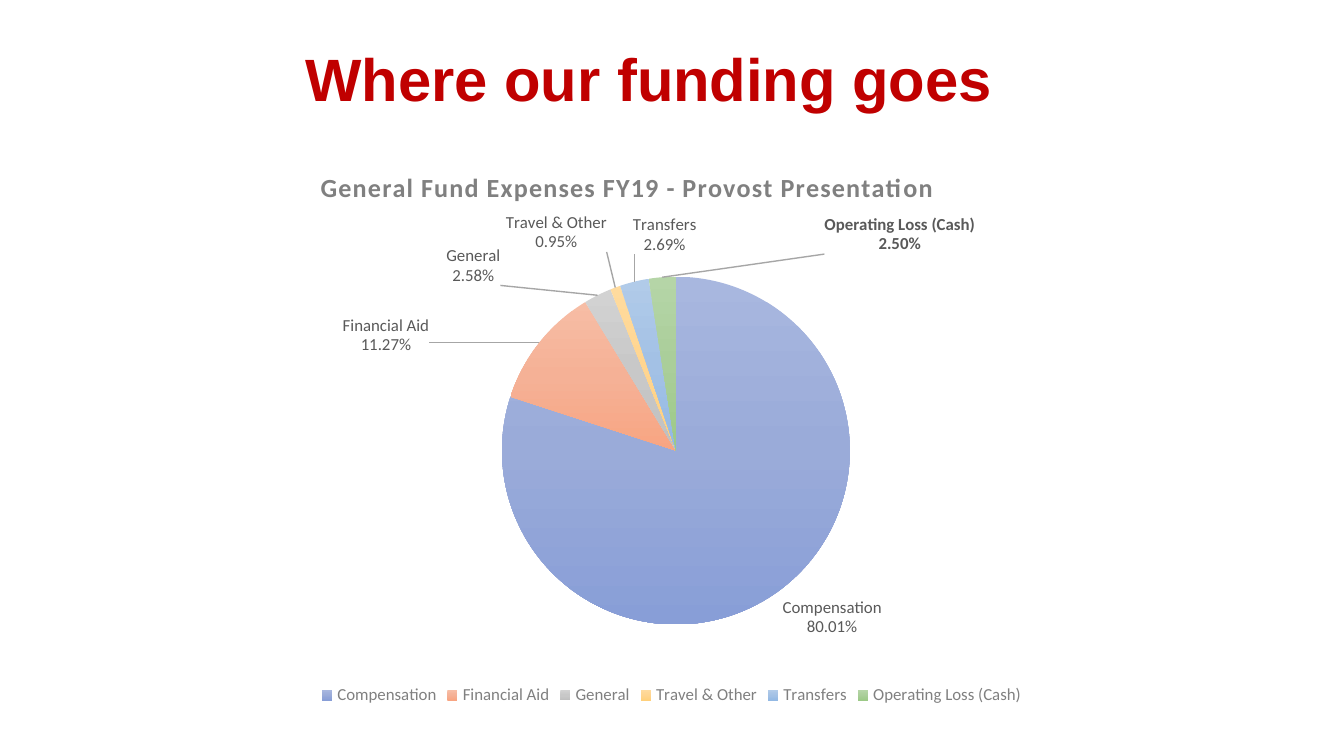
from copy import deepcopy

from pptx import Presentation
from pptx.chart.data import CategoryChartData
from pptx.dml.color import RGBColor
from pptx.enum.chart import XL_CHART_TYPE, XL_LABEL_POSITION, XL_LEGEND_POSITION
from pptx.enum.text import MSO_ANCHOR, PP_ALIGN
from pptx.oxml import parse_xml
from pptx.oxml.ns import nsdecls, qn
from pptx.util import Cm, Pt

PIE = XL_CHART_TYPE.PIE
OUTSIDE_END = XL_LABEL_POSITION.OUTSIDE_END
BOTTOM = XL_LEGEND_POSITION.BOTTOM
MIDDLE = MSO_ANCHOR.MIDDLE
CENTER = PP_ALIGN.CENTER

COLORS = {
    "title": "C00000",
    "chart_text": "808080",
    "label": "595959",
    "leader": "A6A6A6",
}

EXPENSES = [
    ("Compensation", 80.01, ("A8B7DF", "9AABD9", "889ED7"), None),
    ("Financial Aid", 11.27, ("F7BDA5", "F5B196", "F8A582"), (-0.07, 0.03)),
    ("General", 2.58, ("D2D2D2", "C8C8C8", "C0C0C0"), (-0.063, -0.005)),
    ("Travel & Other", 0.95, ("FFDB9E", "FFD590", "FFD07C"), (-0.004, -0.05)),
    ("Transfers", 2.69, ("B1CBE9", "A3C1E5", "93B9E4"), (0.043, -0.035)),
    ("Operating Loss (Cash)", -2.5, ("B5D5A7", "AACE9A", "9CC987"), (0.16, -0.027)),
]


def manual_layout(x, y, width=None, height=None):
    edges = '<c:xMode val="edge"/><c:yMode val="edge"/>'
    size = f'<c:w val="{width}"/><c:h val="{height}"/>'
    return parse_xml(
        f'<c:layout {nsdecls("c")}><c:manualLayout>'
        f'{"<c:layoutTarget val=" + chr(34) + "inner" + chr(34) + "/>" + edges if width else ""}'
        f'<c:x val="{x}"/><c:y val="{y}"/>{size if width else ""}'
        "</c:manualLayout></c:layout>"
    )


class FundingSlide:
    def __init__(self, presentation):
        self.slide = presentation.slides.add_slide(presentation.slide_layouts[5])
        self.heading_font = "Arial"
        self.chart_font = "Calibri"

    def style_font(self, font, name, size, color, bold=False):
        font.name, font.size, font.bold = name, Pt(size), bold
        font.color.rgb = RGBColor.from_string(COLORS[color])

    def add_title(self, text, left, top, width, height):
        shape = self.slide.shapes.title
        shape.left, shape.top, shape.width, shape.height = left, top, width, height
        shape.text_frame.text = text
        shape.text_frame.vertical_anchor = MIDDLE
        paragraph = shape.text_frame.paragraphs[0]
        paragraph.alignment, paragraph.line_spacing = CENTER, 0.9
        self.style_font(paragraph.runs[0].font, self.heading_font, 32, "title", True)

    def add_pie(self, title, expenses, left, top, width, height):
        data = CategoryChartData()
        data.categories = [name for name, *_ in expenses]
        data.add_series("Series 1", [value for _, value, *_ in expenses])
        chart = self.slide.shapes.add_chart(PIE, left, top, width, height, data).chart
        chart.font.name, chart.font.size = self.chart_font, Pt(10)
        self.add_chart_title(chart, title)
        chart.has_legend = True
        chart.legend.position, chart.legend.include_in_layout = BOTTOM, False
        self.style_font(chart.legend.font, self.chart_font, 9, "chart_text")
        plot_area = chart._chartSpace.chart.plotArea
        for layout in plot_area.findall(qn("c:layout")):
            plot_area.remove(layout)
        plot_area.insert(0, manual_layout(0.386, 0.233, 0.234, 0.615))
        chart.plots[0].vary_by_categories = True
        series = chart.plots[0].series[0]
        for index, (_, _, colors, _) in enumerate(expenses):
            self.fill_slice(series.points[index], colors)
        self.add_labels(series, [offset for *_, offset in expenses])

    def add_chart_title(self, chart, text):
        chart.has_title = True
        chart.chart_title.text_frame.text = text
        run = chart.chart_title.text_frame.paragraphs[0].runs[0]
        self.style_font(run.font, self.chart_font, 14, "chart_text", True)
        run.font._element.set("spc", "50")
        title = chart.chart_title._element
        for layout in title.findall(qn("c:layout")):
            title.remove(layout)
        layout = manual_layout(0.261, 0.035)
        for tag in ("c:yMode", "c:xMode"):
            layout[0].insert(0, parse_xml(f'<{tag} {nsdecls("c")} val="edge"/>'))
        title.find(qn("c:tx")).addnext(layout)

    def fill_slice(self, point, colors):
        fill = point.format.fill
        fill.gradient()
        fill.gradient_angle = 270
        first = fill.gradient_stops[0]._gs
        first.addnext(deepcopy(first))
        for stop, color, position in zip(fill.gradient_stops, colors, (0, 0.5, 1)):
            stop.color.rgb = RGBColor.from_string(color)
            stop.position = position
        point.format.line.fill.background()

    def add_labels(self, series, offsets):
        labels = series.data_labels
        labels.show_value = False
        labels.show_category_name = labels.show_percentage = True
        labels.number_format, labels.number_format_is_linked = "0.00%", False
        labels.position = OUTSIDE_END
        self.style_font(labels.font, self.chart_font, 9, "label")
        element = labels._element
        leader_switch = element.find(qn("c:showLeaderLines"))
        if leader_switch is None:
            leader_switch = parse_xml(f'<c:showLeaderLines {nsdecls("c")}/>')
            element.append(leader_switch)
        leader_switch.set("val", "1")
        leader_switch.addprevious(
            parse_xml(f'<c:separator {nsdecls("c")}>\n</c:separator>'))
        leader_switch.addnext(parse_xml(
            f'<c:leaderLines {nsdecls("c", "a")}><c:spPr><a:ln w="9525"><a:solidFill>'
            f'<a:srgbClr val="{COLORS["leader"]}"/></a:solidFill></a:ln></c:spPr>'
            "</c:leaderLines>"))
        shared = [child for child in element
                  if child.tag not in (qn("c:showLeaderLines"), qn("c:leaderLines"))]
        last = len(offsets) - 1
        for index, offset in enumerate(offsets):
            if offset is None:
                continue
            label = parse_xml(f'<c:dLbl {nsdecls("c")}><c:idx val="{index}"/></c:dLbl>')
            label.append(manual_layout(*offset))
            label.extend(deepcopy(shared))
            shared[0].addprevious(label)
            if index == last:
                for properties in label.iter(qn("a:defRPr")):
                    properties.set("b", "1")


def main():
    presentation = Presentation()
    presentation.slide_width, presentation.slide_height = Cm(25.4), Cm(14.29)
    funding = FundingSlide(presentation)
    funding.add_title("Where our funding goes", Cm(0.89), Cm(0.36), Cm(22.76), Cm(2.39))
    funding.add_pie("General Fund Expenses FY19 - Provost Presentation", EXPENSES,
                    Cm(-1.37), Cm(2.74), Cm(28.12), Cm(10.69))
    presentation.save("out.pptx")


if __name__ == "__main__":
    main()
